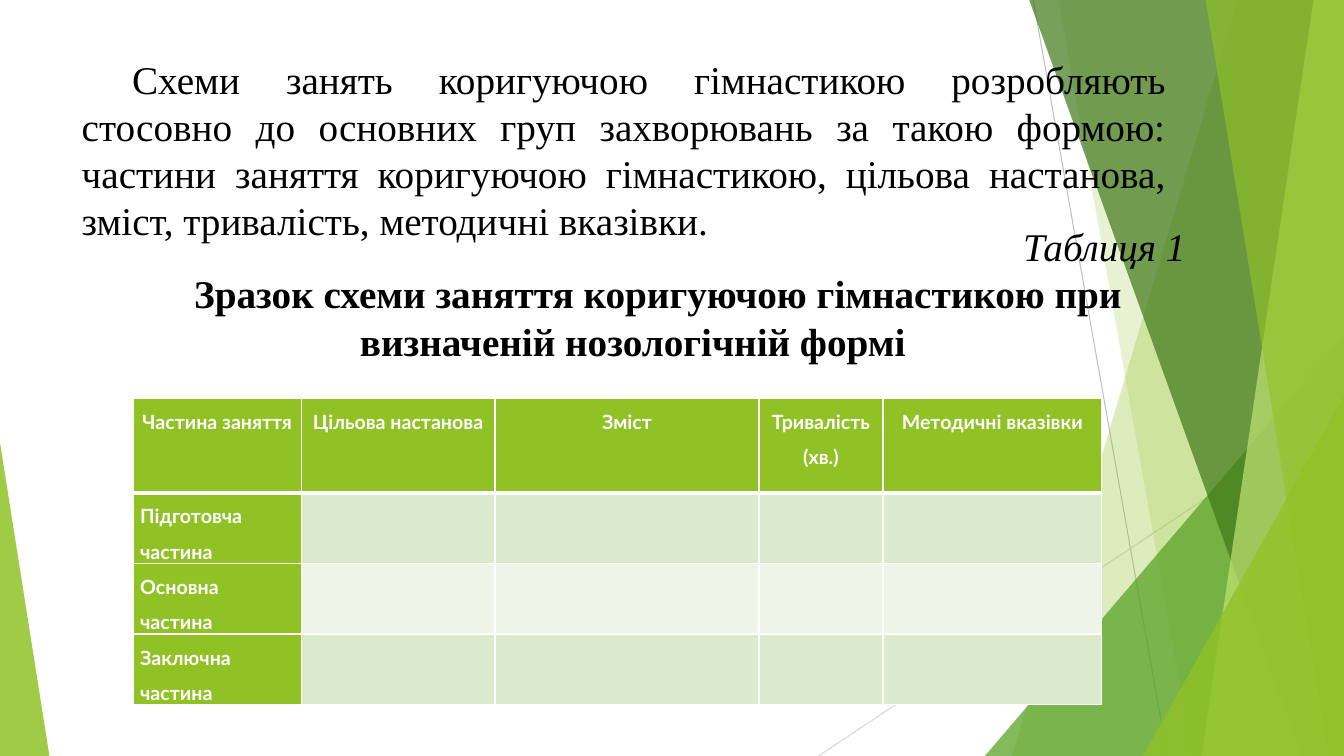
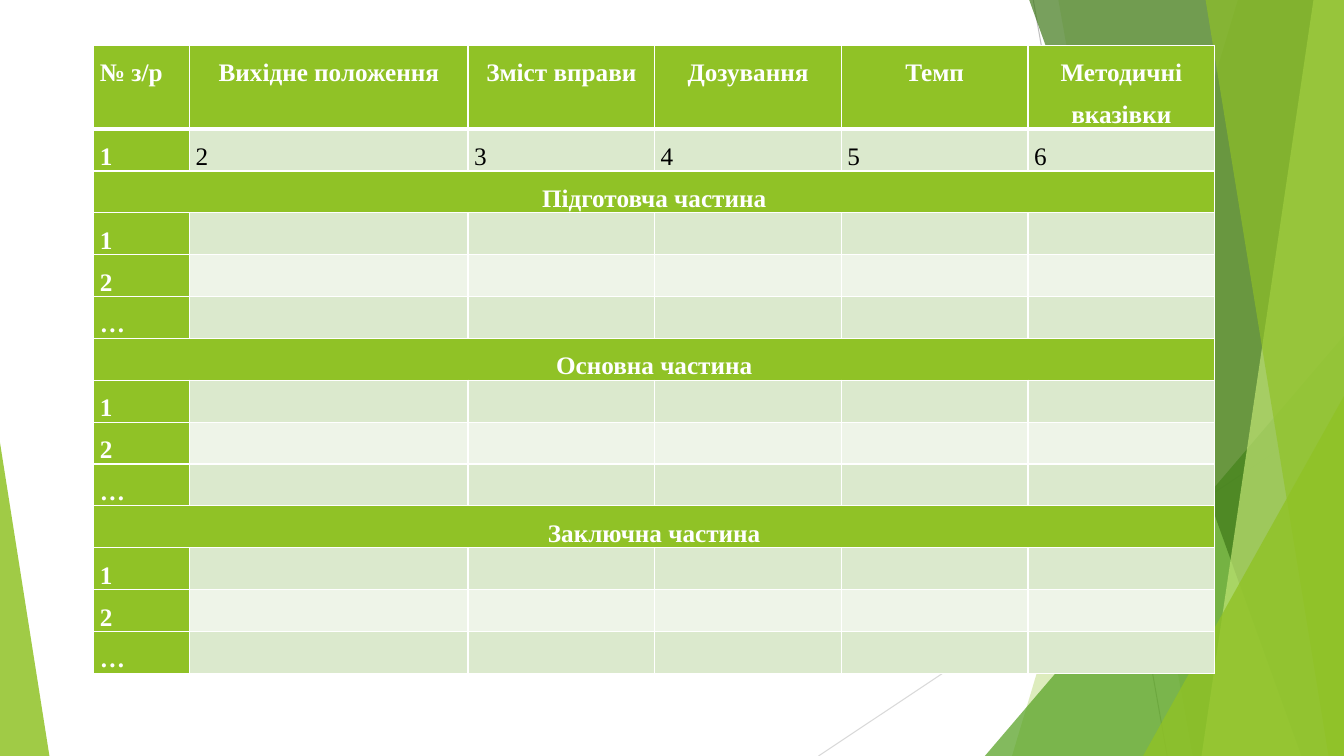
from lxml.etree import SubElement
from pptx import Presentation
from pptx.dml.color import RGBColor
from pptx.enum.shapes import MSO_CONNECTOR as Connector, MSO_SHAPE as Preset
from pptx.enum.text import MSO_ANCHOR as Anchor, MSO_AUTO_SIZE as AutoSize, PP_ALIGN as Align
from pptx.oxml.ns import qn
from pptx.util import Inches, Pt

WIDTH, HEIGHT = Inches(13.33), Inches(7.5)
LIME = RGBColor(0x90, 0xC2, 0x26)
GREEN = RGBColor(0x54, 0xA0, 0x21)
FOREST = RGBColor(0x3F, 0x78, 0x19)
PALE_LIME = RGBColor(0xC0, 0xE4, 0x74)
BAND_DARK = RGBColor(0xDB, 0xE9, 0xCD)
BAND_LIGHT = RGBColor(0xEE, 0xF4, 0xE8)
GRAY = RGBColor(0xBF, 0xBF, 0xBF)
LIGHT_GRAY = RGBColor(0xD9, 0xD9, 0xD9)
WHITE = RGBColor(0xFF, 0xFF, 0xFF)
BLACK = RGBColor(0, 0, 0)
SERIF, SANS = "Times New Roman", "Lato"
TEXT_SIZE, TEXT_PITCH = Pt(28), Pt(33.6)
FIRST_LINE = Inches(0.5)

RAYS = [(76.88, 0, 86.85, 100, GRAY), (100, 53.73, 60.9, 100, LIGHT_GRAY)]
BANDS_BEHIND = [(92.1, 75.3, LIME, 30), (78.75, 88.73, LIME, 20)]
BANDS_FRONT = [(76.58, 96.83, FOREST, 70), (97.73, 89.4, PALE_LIME, 70), (89.7, 98.85, LIME, 65)]
BACK_CORNER = (73.28, 44.4, 26.72, 1, GREEN, 72)
FRONT_CORNERS = [(85.05, 52.4, 14.95, 1, LIME, 80), (0, 58.53, 3.68, 0, LIME, 85)]

PARTS = ["Підготовча частина", "Основна частина", "Заключна частина"]


def across(percent):
    """Turn a percentage of the slide width into a length."""
    return round(WIDTH * percent / 100)


def down(percent):
    """Turn a percentage of the slide height into a length."""
    return round(HEIGHT * percent / 100)


def place(left, top, width, height):
    """Turn a box given in percentages into lengths."""
    return across(left), down(top), across(width), down(height)


def paint(shape, color, opacity):
    """Give a shape a translucent fill with no outline or shadow."""
    shape.shadow.inherit = False
    shape.fill.solid()
    shape.fill.fore_color.rgb = color
    shape.line.fill.background()
    tint = shape.element.spPr.find(".//" + qn("a:srgbClr"))
    SubElement(tint, qn("a:alpha")).set("val", str(opacity * 1000))


def draw_ray(shapes, x1, y1, x2, y2, color):
    """Draw one thin background line."""
    ray = shapes.add_connector(Connector.STRAIGHT, across(x1), down(y1), across(x2), down(y2))
    ray.line.color.rgb = color
    ray.line.width = Pt(0.75)
    SubElement(ray.element.spPr, qn("a:effectLst"))
    return ray


def draw_band(shapes, top_left, bottom_left, color, opacity):
    """Draw a slanted band that reaches the right edge of the slide."""
    outline = shapes.build_freeform(across(top_left), 0)
    corners = [(WIDTH, 0), (WIDTH, HEIGHT), (across(bottom_left), HEIGHT)]
    outline.add_line_segments(corners, close=True)
    band = outline.convert_to_shape()
    paint(band, color, opacity)
    return band


def draw_corner(shapes, left, top, width, apex, color, opacity):
    """Draw a triangle that stands on the bottom edge of the slide."""
    corner = shapes.add_shape(Preset.ISOSCELES_TRIANGLE, *place(left, top, width, 100 - top))
    corner.adjustments[0] = apex
    paint(corner, color, opacity)
    return corner


def build_backdrop(master, page):
    """Draw the shared backdrop and settle it on the slide master."""
    shapes = page.shapes
    backdrop = [draw_ray(shapes, *ray) for ray in RAYS]
    backdrop += [draw_band(shapes, *band) for band in BANDS_BEHIND]
    backdrop.append(draw_corner(shapes, *BACK_CORNER))
    backdrop += [draw_band(shapes, *band) for band in BANDS_FRONT]
    backdrop += [draw_corner(shapes, *corner) for corner in FRONT_CORNERS]
    for position, shape in enumerate(backdrop, start=2):
        master.shapes.element.insert(position, shape.element)


def add_run(para, text, font, size, color, bold=False, italic=False):
    """Add one formatted run to a paragraph."""
    span = para.add_run()
    span.text = text
    span.font.name = font
    span.font.size = size
    span.font.color.rgb = color
    span.font.bold = bold
    span.font.italic = italic


def fill_placeholder(holder, box, anchor, lines):
    """Place a placeholder and write its paragraphs with a first-line indent."""
    holder.left, holder.top, holder.width, holder.height = place(*box)
    frame = holder.text_frame
    frame.word_wrap = True
    frame.auto_size = AutoSize.NONE
    frame.vertical_anchor = anchor
    for number, (text, align, bold, italic) in enumerate(lines):
        para = frame.add_paragraph() if number else frame.paragraphs[0]
        para.alignment = align
        para.line_spacing = TEXT_PITCH
        para.space_before = Pt(0)
        properties = para._p.get_or_add_pPr()
        properties.set("marL", "0")
        properties.set("indent", str(FIRST_LINE))
        SubElement(properties, qn("a:buNone"))
        add_run(para, text, SERIF, TEXT_SIZE, BLACK, bold, italic)


def border_cell(cell, top, bottom):
    """Draw white cell borders with the given top and bottom weights."""
    properties = cell._tc.get_or_add_tcPr()
    sides = [("a:lnL", 1), ("a:lnR", 1), ("a:lnT", top), ("a:lnB", bottom)]
    for position, (side, weight) in enumerate(sides):
        line = SubElement(properties, qn(side), w=str(Pt(weight)))
        fill = SubElement(line, qn("a:solidFill"))
        SubElement(fill, qn("a:srgbClr"), val=str(WHITE))
        properties.insert(position, line)


def format_cell(cell, row, column, text, centered, accent, font, size, inset):
    """Fill, border and write one table cell."""
    cell.fill.solid()
    cell.fill.fore_color.rgb = LIME if accent else BAND_DARK if row % 2 else BAND_LIGHT
    border_cell(cell, 3 if row == 1 else 1, 1 if row else 3)
    cell.margin_left = cell.margin_right = inset
    cell.margin_top = cell.margin_bottom = 0
    if text:
        para = cell.text_frame.paragraphs[0]
        para.alignment = Align.CENTER if centered else Align.JUSTIFY
        para.line_spacing = 1.5
        add_run(para, text, font, size, WHITE if accent else BLACK, bold=accent)


def build_table(page, box, header_height, weights, rows, font, size, inset, centered_from=0):
    """Build a banded table; a row holding a single string becomes a section band."""
    left, top, width, height = place(*box)
    table = page.shapes.add_table(len(rows), len(weights), left, top, width, height).table
    for column, weight in zip(table.columns, weights):
        column.width = round(width * weight / sum(weights))
    header = down(header_height)
    for number, line in enumerate(table.rows):
        line.height = (height - header) // (len(rows) - 1) if number else header
    for number, row in enumerate(rows):
        section = isinstance(row, str)
        texts = [row] if section else row
        if section:
            table.cell(number, 0).merge(table.cell(number, len(weights) - 1))
        for column in range(len(weights)):
            text = texts[column] if column < len(texts) else ""
            accent = section or number == 0 or column == 0
            centered = section or (number == 0 and column >= centered_from)
            cell = table.cell(number, column)
            format_cell(cell, number, column, text, centered, accent, font, size, inset)


def build_scheme_page(page):
    """Build the page with the introduction, the caption and the lesson scheme."""
    introduction = (
        "Схеми занять коригуючою гімнастикою розробляють стосовно до основних груп "
        "захворювань за такою формою: частини заняття коригуючою гімнастикою, цільова "
        "настанова, зміст, тривалість, методичні вказівки."
    )
    heading = "Зразок схеми заняття коригуючою гімнастикою при визначеній нозологічній формі"
    fill_placeholder(page.placeholders[1], (5.33, 6.67, 82.13, 81.33), Anchor.TOP,
                     [(introduction, Align.JUSTIFY, False, False)])
    fill_placeholder(page.shapes.title, (5.18, 19.2, 83.78, 29.6), Anchor.BOTTOM,
                     [("Таблиця 1", Align.RIGHT, False, True),
                      (heading, Align.CENTER, True, False)])
    header = ["Частина заняття", "Цільова настанова", "Зміст", "Тривалість (хв.)",
              "Методичні вказівки"]
    build_table(page, (9.9, 52.67, 72.08, 40.53), 12.53, [1.67, 1.92, 2.62, 1.23, 2.17],
                [header] + [[part] for part in PARTS], SANS, Pt(14), Inches(0.07))


def build_plan_page(page):
    """Build the page with the exercise plan table."""
    rows = [
        ["№ з/р", "Вихідне положення", "Зміст вправи", "Дозування", "Темп", "Методичні вказівки"],
        [str(number) for number in range(1, 7)],
    ]
    for part in PARTS:
        rows += [part, ["1"], ["2"], ["…"]]
    build_table(page, (6.98, 6, 83.4, 83.07), 11.07, [0.95, 2.76] + [1.85] * 4,
                rows, SERIF, Pt(18), Inches(0.06), centered_from=1)


def main():
    """Build and save the deck."""
    deck = Presentation()
    deck.slide_width, deck.slide_height = WIDTH, HEIGHT
    scheme_page = deck.slides.add_slide(deck.slide_layouts[1])
    build_backdrop(deck.slide_master, scheme_page)
    build_scheme_page(scheme_page)
    build_plan_page(deck.slides.add_slide(deck.slide_layouts[6]))
    deck.save("out.pptx")


if __name__ == "__main__":
    main()
